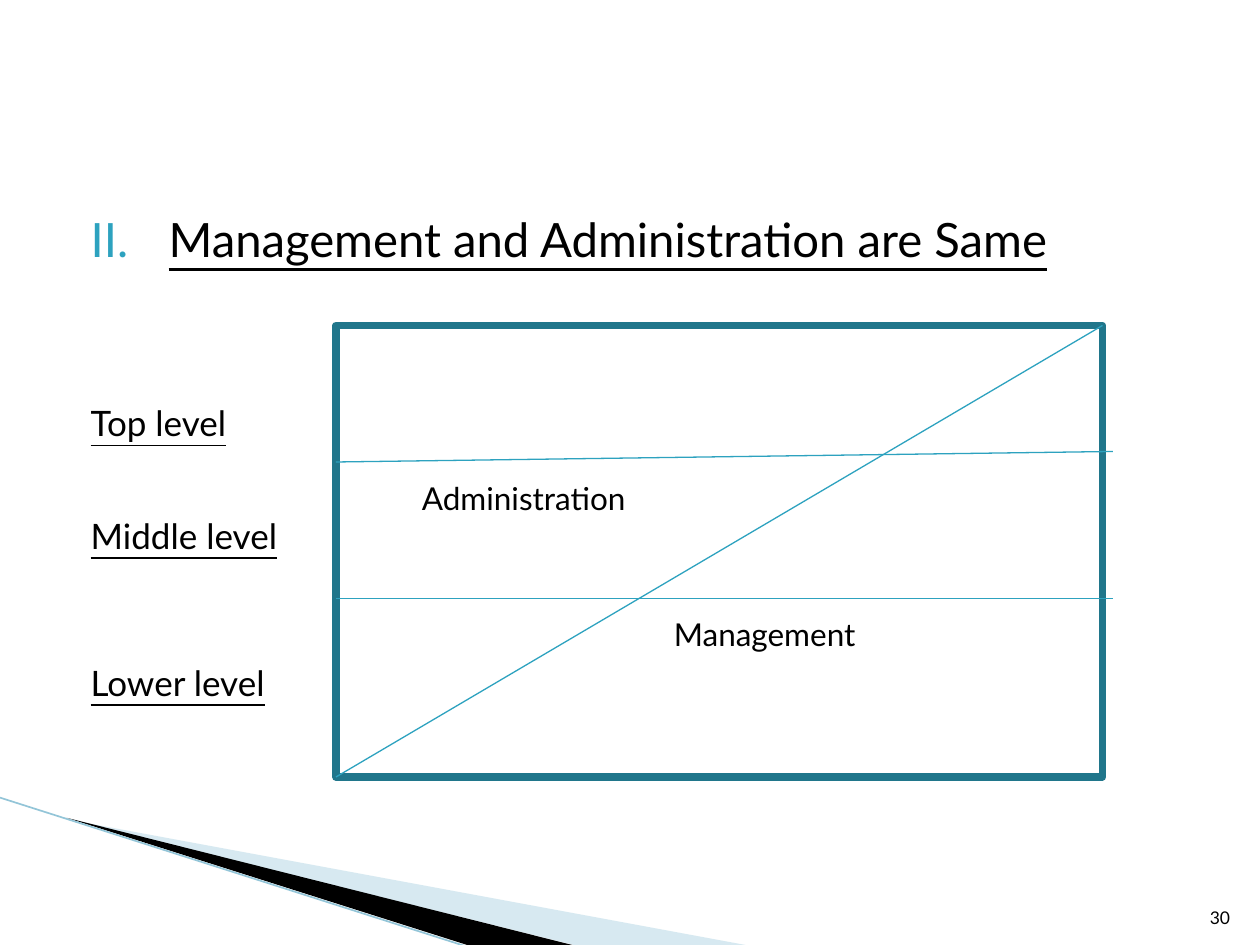
from lxml import etree
from pptx import Presentation
from pptx.dml.color import RGBColor
from pptx.enum import shapes, text
from pptx.oxml import ns
from pptx.util import Pt

FONT = "Lato"
ACCENT, DARK_ACCENT = "2DA2BF", "20768B"


def rgb(value):
    """Turn a hex string into a colour."""
    return RGBColor.from_string(value)


def add_element(parent, tag, **attributes):
    """Append a DrawingML element to its parent."""
    return etree.SubElement(parent, ns.qn(tag), attributes)


def write(paragraph, content, size=18, color="000000", underline=None, before=None,
          align=None):
    """Put formatted text into a paragraph."""
    run = paragraph.add_run()
    run.text = content
    run.font.name = FONT
    run.font.size = Pt(size)
    run.font.color.rgb = rgb(color)
    run.font.underline = underline
    paragraph.alignment = align
    if before is not None:
        paragraph.space_before = Pt(before)


def add_box(slide, left, top, width, height, anchor=text.MSO_ANCHOR.TOP):
    """Add an empty wrapping text box and return its frame."""
    frame = slide.shapes.add_textbox(Pt(left), Pt(top), Pt(width), Pt(height)).text_frame
    frame.word_wrap = True
    frame.vertical_anchor = anchor
    return frame


def add_line(slide, start, end, color=ACCENT, width=0.75):
    """Draw a straight line between two points."""
    line = slide.shapes.add_connector(
        shapes.MSO_CONNECTOR.STRAIGHT, *(Pt(value) for value in (*start, *end)))
    line.line.color.rgb = rgb(color)
    line.line.width = Pt(width)
    add_element(line._element.spPr, "a:effectLst")


def add_wedge(slide, points, color, opacity=100):
    """Draw a filled outline without a border."""
    start, *rest = [(Pt(x), Pt(y)) for x, y in points]
    builder = slide.shapes.build_freeform(*start)
    builder.add_line_segments(rest, close=True)
    wedge = builder.convert_to_shape()
    wedge.shadow.inherit = False
    wedge.fill.solid()
    wedge.fill.fore_color.rgb = rgb(color)
    wedge.line.fill.background()
    if opacity < 100:
        fill_color = wedge._element.spPr.find(f".//{ns.qn('a:srgbClr')}")
        add_element(fill_color, "a:alpha", val=str(opacity * 1000))


def add_corner(slide, left, top, width, height):
    """Draw the swoosh in the lower left corner."""
    bottom = top + height
    add_wedge(slide, [(left + 39.6, top + 12.7), (left + 426, bottom),
                      (left + 328, bottom)], "9CCADC", 40)
    add_wedge(slide, [(left + 38, top + 11.5), (left + 327, bottom),
                      (left + 267, bottom)], "000000")
    add_line(slide, (left, top), (left + 267, bottom + 1), "93C5D8", 0.95)


def add_outline(slide, left, top, width, height):
    """Write the numbered heading and the level names below it."""
    frame = add_box(slide, left, top, width, height)
    lines = [("Management and Administration are Same", 27, None),
             ("Top level", 20, 76.8), ("Middle level", 20, 40.4), ("Lower level", 20, 60)]
    for index, (content, size, before) in enumerate(lines):
        paragraph = frame.add_paragraph() if index else frame.paragraphs[0]
        properties = paragraph._p.get_or_add_pPr()
        properties.set("marL", str(Pt(53.3)))
        properties.set("indent", str(Pt(-44.6)))
        if index == 0:
            bullet_color = add_element(properties, "a:buClr")
            add_element(bullet_color, "a:srgbClr", val=ACCENT)
            add_element(properties, "a:buFont", typeface=FONT)
            add_element(properties, "a:buAutoNum", type="romanUcPeriod", startAt="2")
        write(paragraph, content, size, underline=True, before=before)


def add_diagram(slide, left, top, width, height):
    """Draw the framed levels split by a diagonal, with both labels."""
    frame = slide.shapes.add_shape(
        shapes.MSO_SHAPE.RECTANGLE, Pt(left), Pt(top), Pt(width), Pt(height))
    frame.shadow.inherit = False
    frame.fill.solid()
    frame.fill.fore_color.rgb = rgb("FFFFFF")
    frame.line.color.rgb = rgb(DARK_ACCENT)
    frame.line.width = Pt(4.33)
    right, bottom = left + width, top + height
    for start, end in [(78, 72), (156, 156)]:
        add_line(slide, (left, top + start), (right + 6, top + end))
    add_line(slide, (left, bottom), (right, top))
    for label, x, y, label_width in [("Administration", 42, 84, 204),
                                     ("Management", 186, 162, 198)]:
        box = add_box(slide, left + x, top + y, label_width, 29)
        write(box.paragraphs[0], label)


def add_number(slide, left, top, width, height):
    """Write the slide number."""
    box = add_box(slide, left, top, width, height, text.MSO_ANCHOR.BOTTOM)
    write(box.paragraphs[0], "30", 10, align=text.PP_ALIGN.RIGHT)


def main():
    """Build and save the slide."""
    presentation = Presentation()
    presentation.slide_width, presentation.slide_height = Pt(720), Pt(540)
    slide = presentation.slides.add_slide(presentation.slide_layouts[6])
    add_corner(slide, 0, 455.8, 426, 84.2)
    add_outline(slide, 36, 116.6, 648, 356.4)
    add_number(slide, 681, 504.7, 29, 29)
    add_diagram(slide, 192, 186, 438, 258)
    presentation.save("out.pptx")


if __name__ == "__main__":
    main()
